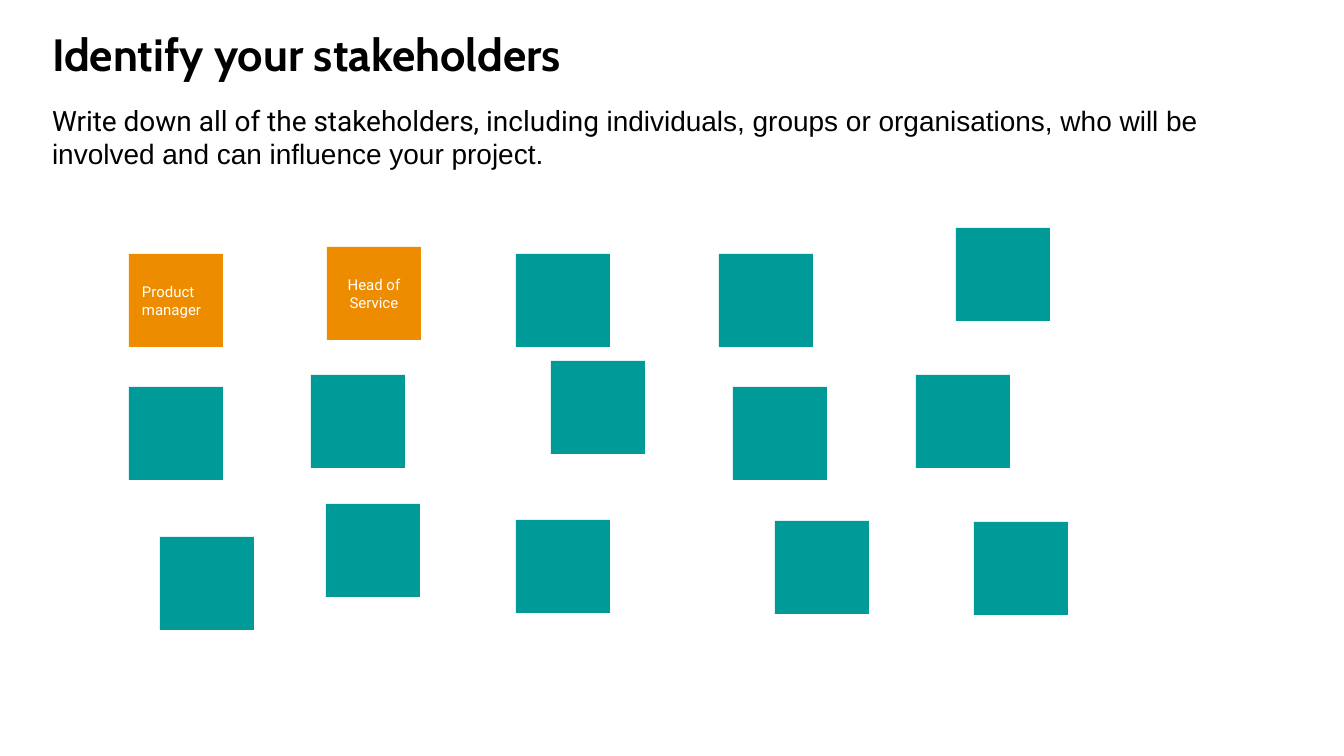
"""Build the stakeholder identification slide with its sticky notes."""
from lxml.etree import SubElement
from pptx import Presentation
from pptx.dml.color import RGBColor
from pptx.enum.shapes import MSO_SHAPE as Shape
from pptx.enum.text import MSO_ANCHOR as Anchor, MSO_AUTO_SIZE as AutoSize, PP_ALIGN as Align
from pptx.oxml.ns import qn
from pptx.util import Pt

SCALE = 914400 / 134.4
PAGE_SIZE = (1344, 756)
INSET = 13
NOTE_SIZE = (94, 93)
BLACK, WHITE, ORANGE, TEAL = "000000", "FFFFFF", "EE8C00", "009B99"

TITLE = [("Identify your stakeholders", "Cabin")]
INTRO = [
    ("Write down all of the stakeholders, including ", "Roboto"),
    ("individuals, groups or organisations, who will be involved and can influence your project.", "Arial"),
]
NAMED_NOTES = [
    ("Product manager", (129, 254), Align.LEFT),
    ("Head of Service", (327, 247), Align.CENTER),
]
EMPTY_NOTES = [
    (516, 254), (719, 254), (956, 228),
    (129, 387), (311, 375), (551, 361), (733, 387), (916, 375),
    (160, 537), (326, 504), (516, 520), (775, 521), (974, 522),
]


def px(value):
    return round(value * SCALE)


def color(value):
    return RGBColor.from_string(value)


def write(box, spans, size, ink, align, anchor, bold=False):
    frame = box.text_frame
    frame.word_wrap = True
    frame.auto_size = AutoSize.NONE
    frame.vertical_anchor = anchor
    frame.margin_left = frame.margin_right = frame.margin_top = frame.margin_bottom = px(INSET)
    para = frame.paragraphs[0]
    para.alignment = align
    para.space_before = Pt(0)
    for text, font in spans:
        span = para.add_run()
        span.text = text
        span.font.name = font
        span.font.size = Pt(size)
        span.font.bold = bold
        span.font.color.rgb = color(ink)
    return para


def place(box, left, top, width, height):
    box.left, box.top, box.width, box.height = map(px, (left, top, width, height))


def add_note(page, position, fill):
    note = page.shapes.add_shape(Shape.RECTANGLE, *map(px, position + NOTE_SIZE))
    note.shadow.inherit = False
    note.fill.solid()
    note.fill.fore_color.rgb = color(fill)
    note.line.fill.background()
    return note


def main():
    deck = Presentation()
    deck.slide_width, deck.slide_height = map(px, PAGE_SIZE)
    page = deck.slides.add_slide(deck.slide_layouts[1])
    title, body = page.placeholders

    place(title, 39, 13, 1255, 79)
    write(title, TITLE, 24.2, BLACK, Align.LEFT, Anchor.TOP, bold=True)

    place(body, 39, 90, 1255, 109)
    para = write(body, INTRO, 15, BLACK, Align.LEFT, Anchor.TOP)
    settings = para._p.get_or_add_pPr()
    settings.set("marL", "0")
    settings.set("indent", "0")
    SubElement(settings, qn("a:buNone"))

    for text, position, align in NAMED_NOTES:
        note = add_note(page, position, ORANGE)
        write(note, [(text, "Roboto")], 8, WHITE, align, Anchor.MIDDLE)
    for position in EMPTY_NOTES:
        add_note(page, position, TEAL)

    deck.save("out.pptx")


if __name__ == "__main__":
    main()
